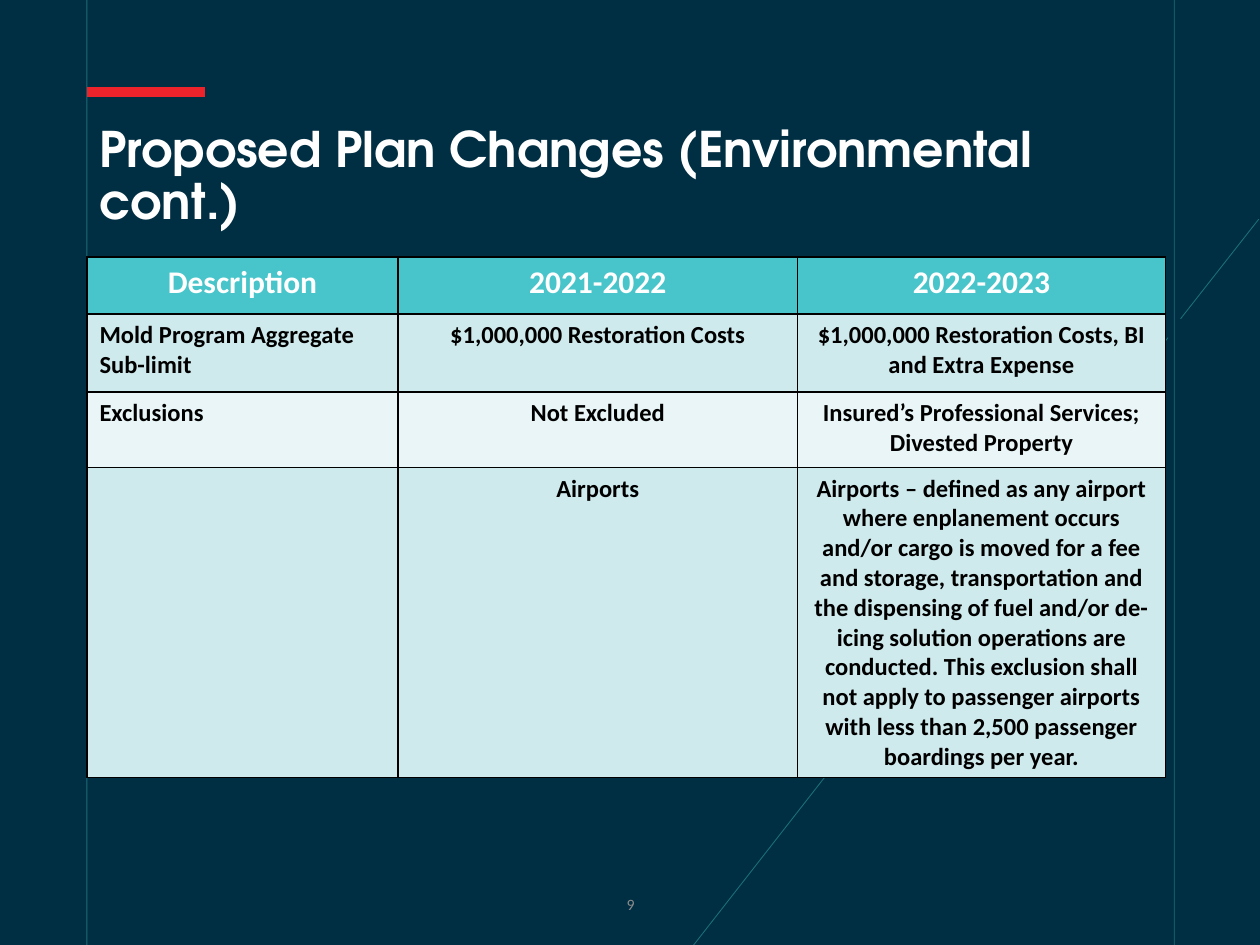
from lxml.etree import SubElement
from pptx import Presentation
from pptx.dml.color import RGBColor
from pptx.enum.shapes import MSO_CONNECTOR
from pptx.enum.text import MSO_ANCHOR, PP_ALIGN
from pptx.oxml import parse_xml
from pptx.oxml.ns import nsdecls, qn
from pptx.util import Inches, Pt

NAVY = RGBColor(0x00, 0x2E, 0x42)
TEAL = RGBColor(0x2E, 0x9B, 0x9F)
RED = RGBColor(0xEC, 0x23, 0x2A)
GREY = RGBColor(0x8C, 0x8C, 0x8C)
WHITE = RGBColor(0xFF, 0xFF, 0xFF)
BLACK = RGBColor(0, 0, 0)
HEAD = RGBColor(0x47, 0xC5, 0xCA)
BANDS = [RGBColor(0xE9, 0xF5, 0xF6), RGBColor(0xCF, 0xEA, 0xEC)]

WIDE, HIGH = 10, 7.5
LEFT, RIGHT = 0.69, 9.32
TITLE = "Proposed Plan Changes (Environmental cont.)"
ROWS = [
    ("Description", "2021-2022", "2022-2023"),
    ("Mold Program Aggregate Sub-limit", "$1,000,000 Restoration Costs",
     "$1,000,000 Restoration Costs, BI and Extra Expense"),
    ("Exclusions", "Not Excluded",
     "Insured’s Professional Services; Divested Property"),
    ("", "Airports",
     "Airports – defined as any airport where enplanement occurs and/or cargo "
     "is moved for a fee and storage, transportation and the dispensing of "
     "fuel and/or de-icing solution operations are conducted. This exclusion "
     "shall not apply to passenger airports with less than 2,500 passenger "
     "boardings per year."),
]
COLS = [2.47, 3.17, 2.92]
TALL = [0.45, 0.62, 0.6, 2.46]
GUIDES = [
    (9.27, 2.68, 5.49, 7.52),
    (LEFT, 0, LEFT, HIGH),
    (RIGHT, 0, RIGHT, HIGH),
    (9.99, 1.74, 9.37, 2.53),
]


def write(frame, text, size=14, color=BLACK, font="Calibri", bold=True,
          align=PP_ALIGN.CENTER, space=None):
    para = frame.paragraphs[0]
    para.alignment = align
    para.line_spacing = space
    para.font.size = Pt(size)
    if text:
        run = para.add_run()
        run.text = text
        run.font.size, run.font.bold, run.font.name = Pt(size), bold, font
        run.font.color.rgb = color


def add_box(slide, area, text, anchor=MSO_ANCHOR.TOP, **style):
    frame = slide.shapes.add_textbox(*map(Inches, area)).text_frame
    frame.word_wrap = True
    frame.vertical_anchor = anchor
    write(frame, text, **style)


def add_line(slide, ends, color, width, alpha=None):
    line = slide.shapes.add_connector(MSO_CONNECTOR.STRAIGHT, *map(Inches, ends))
    line.line.color.rgb = color
    line.line.width = Pt(width)
    props = line._element.spPr
    SubElement(props, qn("a:effectLst"))
    if alpha:
        tint = props.find(".//" + qn("a:srgbClr"))
        SubElement(tint, qn("a:alpha")).set("val", str(alpha * 1000))


def add_edges(cell):
    props = cell._tc.get_or_add_tcPr()
    for spot, side in enumerate(("lnL", "lnR", "lnT", "lnB")):
        props.insert(spot, parse_xml(
            f'<a:{side} {nsdecls("a")} w="12700"><a:solidFill>'
            f'<a:srgbClr val="{BLACK}"/></a:solidFill></a:{side}>'))


def add_grid(slide):
    area = (LEFT, 2.04, sum(COLS), sum(TALL))
    grid = slide.shapes.add_table(
        len(ROWS), len(COLS), *map(Inches, area)).table
    for col, width in zip(grid.columns, COLS):
        col.width = Inches(width)
    for r, (texts, height) in enumerate(zip(ROWS, TALL)):
        grid.rows[r].height = Inches(height)
        for c, text in enumerate(texts):
            cell = grid.cell(r, c)
            cell.fill.solid()
            cell.fill.fore_color.rgb = BANDS[r % 2] if r else HEAD
            add_edges(cell)
            if r == 0:
                write(cell.text_frame, text, size=18, color=WHITE)
            else:
                side = PP_ALIGN.CENTER if c else PP_ALIGN.LEFT
                write(cell.text_frame, text, align=side)


def main():
    deck = Presentation()
    deck.slide_width, deck.slide_height = Inches(WIDE), Inches(HIGH)
    slide = deck.slides.add_slide(deck.slide_layouts[6])
    slide.background.fill.solid()
    slide.background.fill.fore_color.rgb = NAVY
    for ends in GUIDES:
        add_line(slide, ends, TEAL, 0.5, alpha=60)
    add_line(slide, (LEFT, 0.73, 1.63, 0.73), RED, 6)
    add_box(slide, (3.88, 6.98, 2.25, 0.4), "9", anchor=MSO_ANCHOR.MIDDLE,
            size=9, color=GREY, bold=False)
    add_box(slide, (LEFT, 0.94, 7.88, 0.82), TITLE, size=28, color=WHITE,
            font="TeX Gyre Adventor", align=PP_ALIGN.LEFT, space=0.9)
    add_grid(slide)
    deck.save("out.pptx")


if __name__ == "__main__":
    main()
